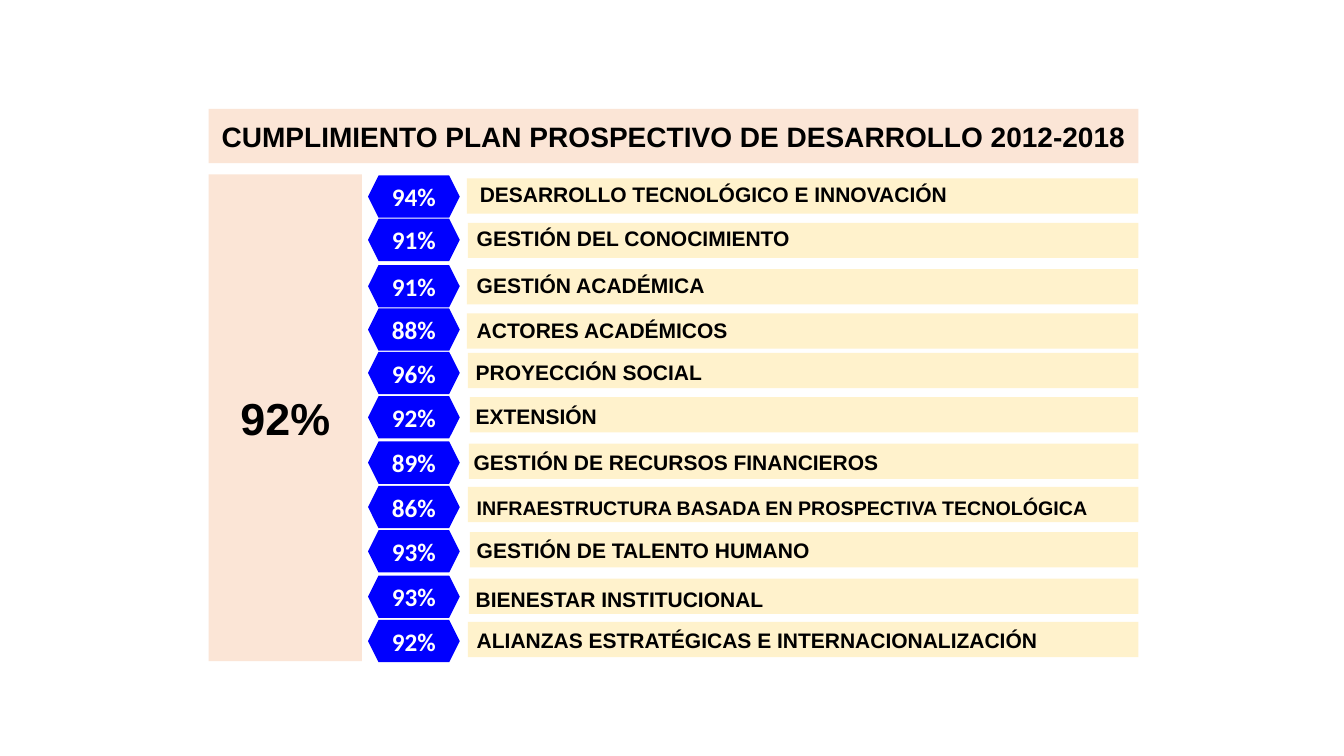
"""Build the slide on compliance with the 2012-2018 development plan."""
from dataclasses import dataclass

from pptx import Presentation
from pptx.dml.color import RGBColor
from pptx.enum.shapes import MSO_SHAPE as Preset
from pptx.enum.text import MSO_ANCHOR as Anchor, MSO_AUTO_SIZE as AutoSize, PP_ALIGN as Align
from pptx.util import Inches, Pt


def color(value):
    return RGBColor.from_string(value)


@dataclass
class Goal:
    name: str
    percent: int
    bar_left: float
    bar_top: float
    label_left: float
    label_top: float
    label_width: float
    hexagon_top: float
    size: int = 15
    wrap: bool = False


class PlanSlide:
    peach, cream, blue = "FBE5D6", "FFF2CC", "0000FF"
    black, white = "000000", "FFFFFF"
    heading_font, badge_font = "Arial", "Calibri"
    bar_right, bar_height = 11.29, 0.35
    hexagon_left, hexagon_width, hexagon_height = 3.65, 0.91, 0.42

    def __init__(self, presentation):
        self.slide = presentation.slides.add_slide(presentation.slide_layouts[6])

    def add_text(self, shape, text, size, font, ink, align):
        paragraph = shape.text_frame.paragraphs[0]
        paragraph.alignment = align
        run = paragraph.add_run()
        run.text = text
        run.font.size = Pt(size)
        run.font.name = font
        run.font.bold = True
        run.font.color.rgb = color(ink)

    def block(self, preset, left, top, width, height, fill):
        shape = self.slide.shapes.add_shape(
            preset, Inches(left), Inches(top), Inches(width), Inches(height))
        shape.shadow.inherit = False
        shape.fill.solid()
        shape.fill.fore_color.rgb = color(fill)
        shape.line.fill.background()
        shape.text_frame.vertical_anchor = Anchor.MIDDLE
        shape.text_frame.word_wrap = False
        return shape

    def panel(self, text, size, left, top, width, height):
        shape = self.block(Preset.RECTANGLE, left, top, width, height, self.peach)
        self.add_text(shape, text, size, self.heading_font, self.black, Align.CENTER)

    def bar(self, goal):
        self.block(Preset.RECTANGLE, goal.bar_left, goal.bar_top,
                   self.bar_right - goal.bar_left, self.bar_height, self.cream)

    def label(self, goal):
        box = self.slide.shapes.add_textbox(
            Inches(goal.label_left), Inches(goal.label_top),
            Inches(goal.label_width), Inches(self.bar_height))
        box.text_frame.word_wrap = goal.wrap
        box.text_frame.auto_size = AutoSize.SHAPE_TO_FIT_TEXT
        self.add_text(box, goal.name, goal.size, self.heading_font, self.black, Align.LEFT)

    def badge(self, goal):
        shape = self.block(Preset.HEXAGON, self.hexagon_left, goal.hexagon_top,
                           self.hexagon_width, self.hexagon_height, self.blue)
        self.add_text(shape, f"{goal.percent}%", 18, self.badge_font, self.white, Align.CENTER)


GOALS = [
    Goal("DESARROLLO TECNOLÓGICO E INNOVACIÓN", 94, 4.63, 1.77, 4.66, 1.75, 4.88, 1.74),
    Goal("GESTIÓN DEL CONOCIMIENTO", 91, 4.64, 2.21, 4.63, 2.19, 3.33, 2.17),
    Goal("GESTIÓN ACADÉMICA", 91, 4.63, 2.67, 4.63, 2.65, 2.49, 2.63),
    Goal("ACTORES ACADÉMICOS", 88, 4.63, 3.11, 4.63, 3.1, 2.72, 3.06),
    Goal("PROYECCIÓN SOCIAL", 96, 4.64, 3.5, 4.62, 3.52, 2.45, 3.49),
    Goal("EXTENSIÓN", 92, 4.66, 3.94, 4.62, 3.95, 1.43, 3.93),
    Goal("GESTIÓN DE RECURSOS FINANCIEROS", 89, 4.65, 4.4, 4.6, 4.41, 4.24, 4.38),
    Goal("INFRAESTRUCTURA BASADA EN PROSPECTIVA TECNOLÓGICA", 86,
         4.64, 4.83, 4.63, 4.87, 6.31, 4.82, size=14),
    Goal("GESTIÓN DE TALENTO HUMANO", 93, 4.66, 5.28, 4.63, 5.28, 3.58, 5.26),
    Goal("BIENESTAR INSTITUCIONAL", 93, 4.65, 5.74, 4.62, 5.77, 3.08, 5.71),
    Goal("ALIANZAS ESTRATÉGICAS E INTERNACIONALIZACIÓN", 92,
         4.64, 6.17, 4.63, 6.18, 6.21, 6.15, wrap=True),
]


def main():
    presentation = Presentation()
    presentation.slide_width = Inches(13.33)
    presentation.slide_height = Inches(7.5)
    plan = PlanSlide(presentation)
    for goal in GOALS:
        plan.bar(goal)
    plan.panel("CUMPLIMIENTO PLAN PROSPECTIVO DE DESARROLLO 2012-2018", 20, 2.07, 1.08, 9.22, 0.54)
    plan.panel("92%", 32, 2.07, 1.73, 1.52, 4.83)
    for goal in GOALS:
        plan.label(goal)
    for goal in GOALS:
        plan.badge(goal)
    presentation.save("out.pptx")


if __name__ == "__main__":
    main()
